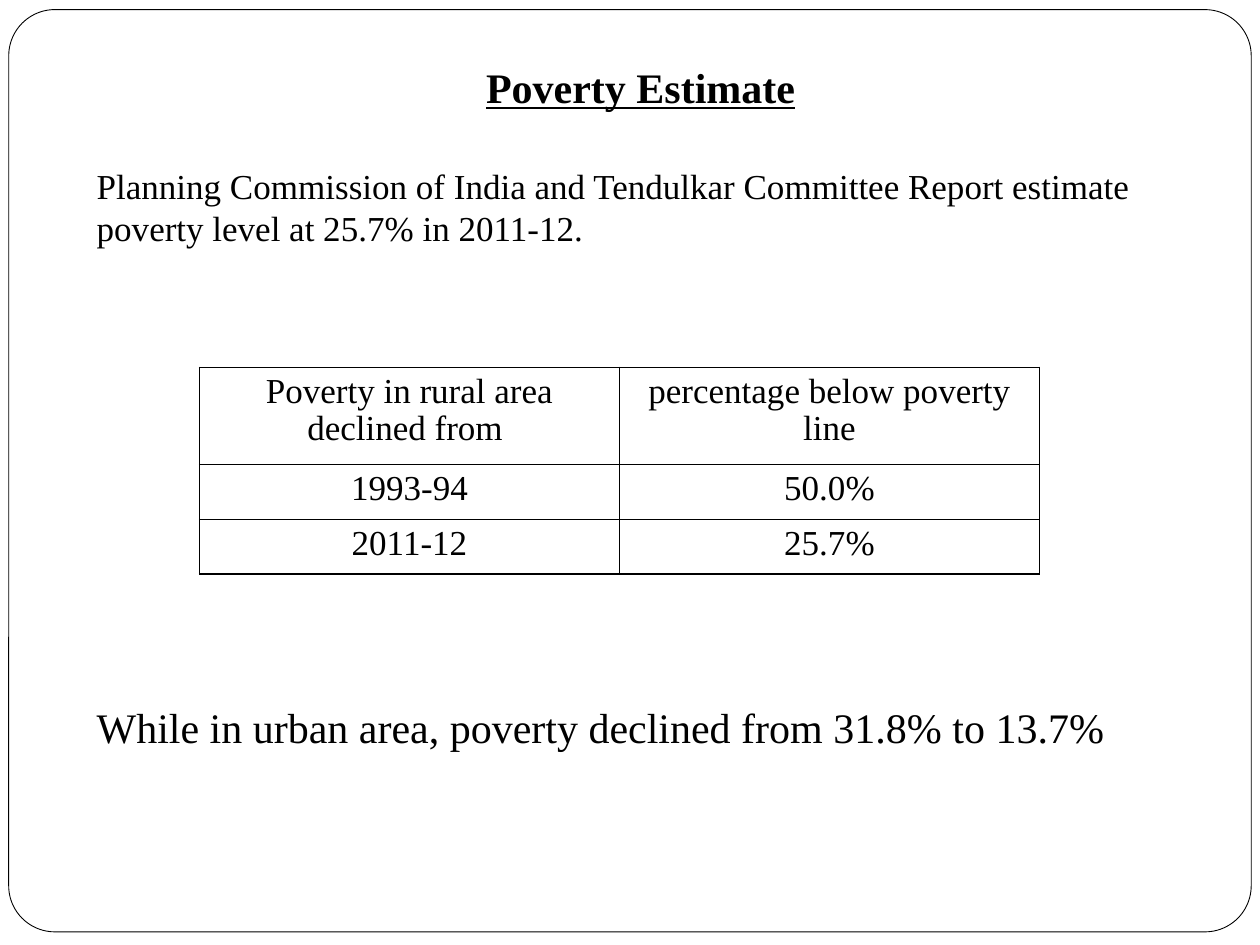
from lxml.etree import SubElement
from pptx import Presentation
from pptx.dml.color import RGBColor
from pptx.enum.shapes import MSO_SHAPE
from pptx.enum.text import MSO_ANCHOR, PP_ALIGN
from pptx.oxml.ns import qn
from pptx.util import Pt

COLOURS = {"ink": "000000", "paper": "FFFFFF"}
FONT = "Times New Roman"
ROW_HEIGHTS = (55.4, 31.4, 31.4)
ROWS = (
    ("Poverty in rural area declined from ", "percentage below poverty line"),
    ("1993-94", "50.0%"),
    ("2011-12", "25.7%"),
)


def colour(name):
    return RGBColor.from_string(COLOURS[name])


def write(para, text, size, align=PP_ALIGN.LEFT, heading=False):
    para.text = text
    para.alignment = align
    font = para.runs[0].font
    font.name, font.size = FONT, Pt(size)
    font.bold = font.underline = heading
    font.color.rgb = colour("ink")


def add_frame(page, left, top, width, height):
    """Draw the rounded outline around the page."""
    frame = page.shapes.add_shape(MSO_SHAPE.ROUNDED_RECTANGLE,
                                  Pt(left), Pt(top), Pt(width), Pt(height))
    frame.adjustments[0] = 0.05
    frame.shadow.inherit = False
    frame.fill.solid()
    frame.fill.fore_color.rgb = colour("paper")
    frame.line.color.rgb = colour("ink")
    frame.line.width = Pt(0.5)


def add_body(page, left, top, width, height):
    """Place the heading and both statements, leaving room for the table."""
    box = page.shapes.add_textbox(Pt(left), Pt(top), Pt(width), Pt(height))
    frame = box.text_frame
    frame.word_wrap = True
    frame.vertical_anchor = MSO_ANCHOR.MIDDLE
    heading = frame.paragraphs[0]
    write(heading, "Poverty Estimate", 24, PP_ALIGN.CENTER, heading=True)
    national = frame.add_paragraph()
    write(national, "Planning Commission of India and Tendulkar Committee Report "
                    "estimate poverty level at 25.7% in 2011-12.", 20)
    national.space_before = Pt(30)
    national.line_spacing = Pt(24)
    urban = frame.add_paragraph()
    write(urban, "While in urban area, poverty declined from 31.8% to 13.7%", 24)
    urban.space_before = Pt(259)


def add_borders(cell):
    properties = cell._tc.get_or_add_tcPr()
    for side in ("a:lnL", "a:lnR", "a:lnT", "a:lnB"):
        line = SubElement(properties, qn(side), w=str(Pt(1)))
        fill = SubElement(line, qn("a:solidFill"))
        SubElement(fill, qn("a:srgbClr"), val=COLOURS["ink"])


def add_poverty_table(page, left, top, width):
    shape = page.shapes.add_table(len(ROWS), len(ROWS[0]), Pt(left), Pt(top),
                                  Pt(width), Pt(sum(ROW_HEIGHTS)))
    table = shape.table
    for column in table.columns:
        column.width = Pt(width / len(ROWS[0]))
    for row, height, texts in zip(table.rows, ROW_HEIGHTS, ROWS):
        row.height = Pt(height)
        for cell, text in zip(row.cells, texts):
            para = cell.text_frame.paragraphs[0]
            write(para, text, 20, PP_ALIGN.CENTER)
            para.line_spacing = 0.95
            add_borders(cell)
            cell.fill.solid()
            cell.fill.fore_color.rgb = colour("paper")


def main():
    deck = Presentation()
    deck.slide_width, deck.slide_height = Pt(720), Pt(540)
    page = deck.slides.add_slide(deck.slide_layouts[6])
    add_frame(page, 5, 5.5, 710, 527)
    add_body(page, 48.2, 30.2, 635.8, 404.6)
    add_poverty_table(page, 114, 210, 480)
    deck.save("out.pptx")


if __name__ == "__main__":
    main()
